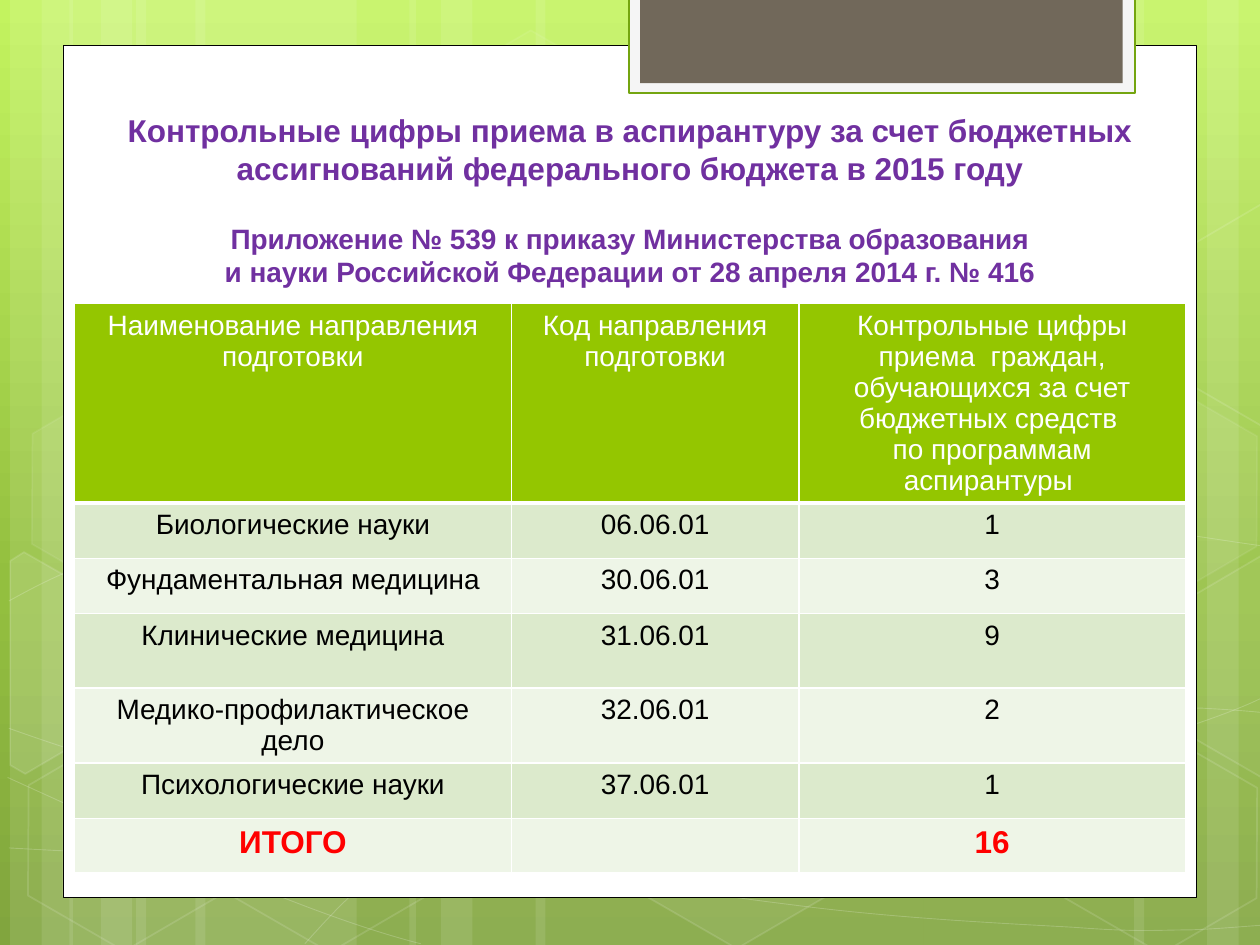
from math import cos, radians, sin
from lxml import etree
from pptx import Presentation
from pptx.dml.color import RGBColor
from pptx.enum import shapes as kinds, text as txt
from pptx.oxml.ns import qn
from pptx.util import Inches, Pt

WHITE = RGBColor(0xFF, 0xFF, 0xFF)
BLACK = RGBColor(0, 0, 0)
RED = RGBColor(0xFF, 0, 0)
PURPLE = RGBColor(0x70, 0x30, 0xA0)
GREEN = RGBColor(0x94, 0xC6, 0x00)
RIM = RGBColor(0x74, 0xA5, 0x10)
BANDS = RGBColor(0xDC, 0xEA, 0xCC), RGBColor(0xEE, 0xF5, 0xE7)
PALE = RGBColor(0xF5, 0xF5, 0xF5)
BROWN = RGBColor(0x71, 0x68, 0x5A)
SKY = [(0, RGBColor(0xC3, 0xF3, 0x5F)), (62, RGBColor(0x93, 0xBF, 0x3F)),
       (100, RGBColor(0x81, 0xA5, 0x3E))]
FONT = "Arial"
TILT = 30

STRIPS = [(1, 1.75), (0, 0.5), (0.25, 0.83)]
WAVES = [
    [(0.07, 6.73), (0.61, 6.76), (1.15, 6.79), (1.9, 6.78), (2.65, 6.77), (3.58, 6.75),
     (4.58, 6.65), (5.58, 6.55), (7, 6.36), (7.92, 6.17), (8.83, 5.98), (9.77, 5.68),
     (10.07, 5.51)],
    [(0.07, 4.77), (0.36, 4.61), (0.65, 4.46), (1.21, 4.31), (1.78, 4.16), (2.59, 3.94),
     (3.47, 3.87), (4.36, 3.8), (5.44, 3.79), (6.54, 3.87), (7.64, 3.95), (9.47, 4.26),
     (10.07, 4.34)],
    [(0.06, 6.17), (1.27, 6.72), (2.47, 7.27), (3.34, 7.49)],
    [(0.07, 5.78), (0.38, 5.89), (0.7, 6), (1.28, 6.16), (1.86, 6.31), (2.73, 6.56),
     (3.57, 6.73), (4.4, 6.9), (5.45, 7.08), (6.28, 7.18), (7.11, 7.29), (8, 7.33),
     (8.53, 7.36), (9.05, 7.4), (9.19, 7.38), (9.45, 7.38), (9.71, 7.37), (9.89, 7.35),
     (10.07, 7.34)],
    [(2.42, 7.49), (2.6, 7.29), (2.78, 7.09), (3.02, 6.91), (3.26, 6.73), (3.6, 6.53),
     (3.88, 6.39), (4.16, 6.25), (4.33, 6.19), (4.7, 6.09), (5.06, 5.99), (5.73, 5.85),
     (6.08, 5.78), (6.44, 5.71), (6.49, 5.71), (6.8, 5.69), (7.11, 5.66), (7.6, 5.63),
     (7.94, 5.62), (8.29, 5.61), (8.86, 5.62), (8.86, 5.62), (9.08, 5.62), (9.3, 5.62),
     (9.53, 5.62), (9.71, 5.63), (9.88, 5.64), (10.06, 5.66)],
]
HEXES = [(3.34, 0.36, 4, 8), (4.97, 5.89, 6, 12), (0.11, 5.91, 0, 12),
         (0.14, 3.12, 7, 8), (1.74, 5.92, 0, 12), (7.53, 4.53, 10, 12),
         (8.34, 5.93, 0, 12), (8.34, 3.14, 7, 8)]
LEFT = [(0.08, 4.45), (0.19, 4.38), (0.96, 4.82), (0.95, 5.7), (0.2, 6.14), (0.08, 6.07)]
RIGHT = [(9.26, 4.85), (10.01, 4.41), (10.09, 4.46), (10.09, 6.13), (10.02, 6.17),
         (9.26, 5.73)]
CUTS = [(LEFT, (0.36, 5.35), 0, 10), (RIGHT, (9.85, 5.2), 0, 4),
        (RIGHT, (9.85, 5.2), -2.79, 0)]

HEAD = ["Контрольные цифры приема в аспирантуру за счет бюджетных "
        "ассигнований федерального бюджета в 2015 году",
        "Приложение № 539 к приказу Министерства образования\v"
        "и науки Российской Федерации от 28 апреля 2014 г. № 416"]
ROWS = [
    ("Наименование направления подготовки", "Код направления подготовки",
     "Контрольные цифры приема  граждан, обучающихся за счет бюджетных средств \n"
     "по программам аспирантуры "),
    ("Биологические науки", "06.06.01", "1"),
    ("Фундаментальная медицина", "30.06.01", "3"),
    ("Клинические медицина", "31.06.01", "9"),
    ("Медико-профилактическое дело", "32.06.01", "2"),
    ("Психологические науки", "37.06.01", "1"),
    ("ИТОГО", "", "16"),
]
COLS = [3.47, 2.28, 3.07]
TALL = [1.55, 0.44, 0.44, 0.59, 0.59, 0.44, 0.43]


def fade(part, share):
    """Give a solid fill element an opacity in percent."""
    if share < 100:
        etree.SubElement(part[0], qn("a:alpha")).set("val", str(share * 1000))


def paint(shape, fill=None, share=100, line=None, width=1, glow=100):
    """Set the fill and line of a shape, with their opacities."""
    shape.shadow.inherit = False
    props = shape._element.spPr
    if fill is None or not share:
        shape.fill.background()
    else:
        shape.fill.solid()
        shape.fill.fore_color.rgb = fill
        fade(props.find(qn("a:solidFill")), share)
    if line is None:
        shape.line.fill.background()
    else:
        shape.line.color.rgb = line
        shape.line.width = Pt(width)
        fade(props.find(qn("a:ln")).find(qn("a:solidFill")), glow)


def add(host, box, kind=kinds.MSO_SHAPE.RECTANGLE):
    """Add a preset shape in a box given in inches."""
    return host.shapes.add_shape(kind, *[Inches(n) for n in box])


def trace(host, points, close):
    """Draw an outline through points given in inches."""
    spots = [(Inches(x), Inches(y)) for x, y in points]
    pen = host.shapes.build_freeform(*spots[0])
    pen.add_line_segments(spots[1:], close=close)
    return pen.convert_to_shape()


def bend(shape):
    """Turn each three line segments of an outline into one cubic curve."""
    lines = list(shape._element.iter(qn("a:lnTo")))
    for trio in zip(lines[::3], lines[1::3], lines[2::3]):
        curve = etree.Element(qn("a:cubicBezTo"))
        trio[0].addprevious(curve)
        for line in trio:
            curve.append(line[0])
            line.getparent().remove(line)


def turn(point, hub):
    """Turn a point back by the tilt angle around a hub."""
    dx, dy = point[0] - hub[0], point[1] - hub[1]
    c, s = cos(radians(TILT)), sin(radians(TILT))
    return hub[0] + dx * c + dy * s, hub[1] - dx * s + dy * c


def sky(layout):
    """Give the layout its vertical gradient."""
    fill = layout.background.fill
    fill.gradient()
    fill.gradient_angle = 270
    stops = layout._element.find(".//" + qn("a:gsLst"))
    stops.clear()
    for place, tint in SKY:
        stop = etree.SubElement(stops, qn("a:gs"), pos=str(place * 1000))
        etree.SubElement(stop, qn("a:srgbClr"), val=str(tint))


def backdrop(slide, box):
    """Lay a group of strips, waves and hexagons in the box."""
    left, top, wide, high = box
    group = slide.shapes.add_group_shape()
    bars = [(x + off, w, 0) for x in (0.08, 0.55) for off, w in STRIPS]
    bars += [(wide + 0.08 - off - w, w, 180) for off, w in STRIPS]
    bars += [(4.25, 3.08, 0), (3.25, 0.5, 0), (3.5, 0.83, 0)]
    for x, w, angle in bars:
        bar = add(group, (left + x, top, w, high))
        bar.rotation = angle
        paint(bar, WHITE, 10)
    for wave in WAVES:
        curve = trace(group, [(left + x, top + y) for x, y in wave], False)
        bend(curve)
        paint(curve, line=WHITE, width=0.5, glow=20)
    for x, y, share, glow in HEXES:
        cell = add(group, (left + x, top + y, 1.75, 1.52), kinds.MSO_SHAPE.HEXAGON)
        cell.adjustments[0], cell.adjustments[1] = 0.285, 1.155
        cell.rotation = TILT
        paint(cell, WHITE, share, WHITE, 1, glow)
    for edge, hub, drop, share in CUTS:
        points = [turn(point, hub) for point in edge]
        cut = trace(group, [(left + x, top + y + drop) for x, y in points], True)
        cut.rotation = TILT
        paint(cut, WHITE, share, WHITE, 1, 12)


def panel(slide, box):
    """Draw the white sheet and the tab that hangs over its top edge."""
    left, top, wide, high = box
    paint(add(slide, box), WHITE, line=BLACK, width=0.5)
    paint(add(slide, (left + 4.49, top - 0.38, 4.02, 0.76)), PALE, line=RIM, width=1.25)
    paint(add(slide, (left + 4.58, top - 0.38, 3.83, 0.68)), BROWN)


def settle(slide, layout):
    """Move the drawn shapes of the slide to the back of its layout."""
    tree = layout.shapes._spTree
    drawn = [s for s in slide.shapes if not s.is_placeholder]
    for i, shape in enumerate(drawn):
        tree.insert(2 + i, shape._element)


def heading(slide, box):
    """Place the title with its reference to the order."""
    title = slide.shapes.title
    title.left, title.top, title.width, title.height = [Inches(n) for n in box]
    frame = title.text_frame
    frame.text = "\n".join(HEAD)
    frame.word_wrap = True
    frame.auto_size = txt.MSO_AUTO_SIZE.NONE
    frame.vertical_anchor = txt.MSO_ANCHOR.BOTTOM
    for para, size, gap in zip(frame.paragraphs, (18, 16), (0, 20)):
        para.alignment = txt.PP_ALIGN.CENTER
        para.space_before = Pt(gap)
        style(para, size, PURPLE, True)


def style(para, size, tint, bold):
    """Format the runs of a paragraph."""
    for run in para.runs:
        font = run.font
        font.name, font.size, font.bold = FONT, Pt(size), bold
        font.color.rgb = tint


def border(cell):
    """Draw the white borders of a header cell."""
    props = cell._tc.get_or_add_tcPr()
    for i, (side, width) in enumerate((("L", 1), ("R", 1), ("T", 1), ("B", 3))):
        line = etree.Element(qn("a:ln" + side), w=str(Pt(width)))
        solid = etree.SubElement(line, qn("a:solidFill"))
        etree.SubElement(solid, qn("a:srgbClr"), val=str(WHITE))
        props.insert(i, line)


def quota(slide, box):
    """Place the table of admission figures."""
    left, top, wide, high = [Inches(n) for n in box]
    grid = slide.shapes.add_table(len(ROWS), len(COLS), left, top, wide, high).table
    for col, size in zip(grid.columns, COLS):
        col.width = Inches(size)
    for i, (row, size) in enumerate(zip(ROWS, TALL)):
        grid.rows[i].height = Inches(size)
        last = i == len(ROWS) - 1
        tint = RED if last else BLACK if i else WHITE
        for j, words in enumerate(row):
            cell = grid.cell(i, j)
            cell.text = words
            cell.fill.solid()
            cell.fill.fore_color.rgb = BANDS[(i - 1) % 2] if i else GREEN
            if not i:
                border(cell)
            for para in cell.text_frame.paragraphs:
                para.alignment = txt.PP_ALIGN.CENTER
                style(para, 18 if last else 16, tint, last)


def main():
    """Build the slide and save it."""
    deck = Presentation()
    deck.slide_width, deck.slide_height = Inches(10), Inches(7.5)
    layout = deck.slide_layouts[5]
    slide = deck.slides.add_slide(layout)
    sky(layout)
    backdrop(slide, (0, 0, 10, 7.5))
    panel(slide, (0.5, 0.36, 9, 6.76))
    settle(slide, layout)
    heading(slide, (0.59, 0.84, 8.82, 1.5))
    quota(slide, (0.59, 2.41, sum(COLS), sum(TALL)))
    deck.save("out.pptx")


if __name__ == "__main__":
    main()
